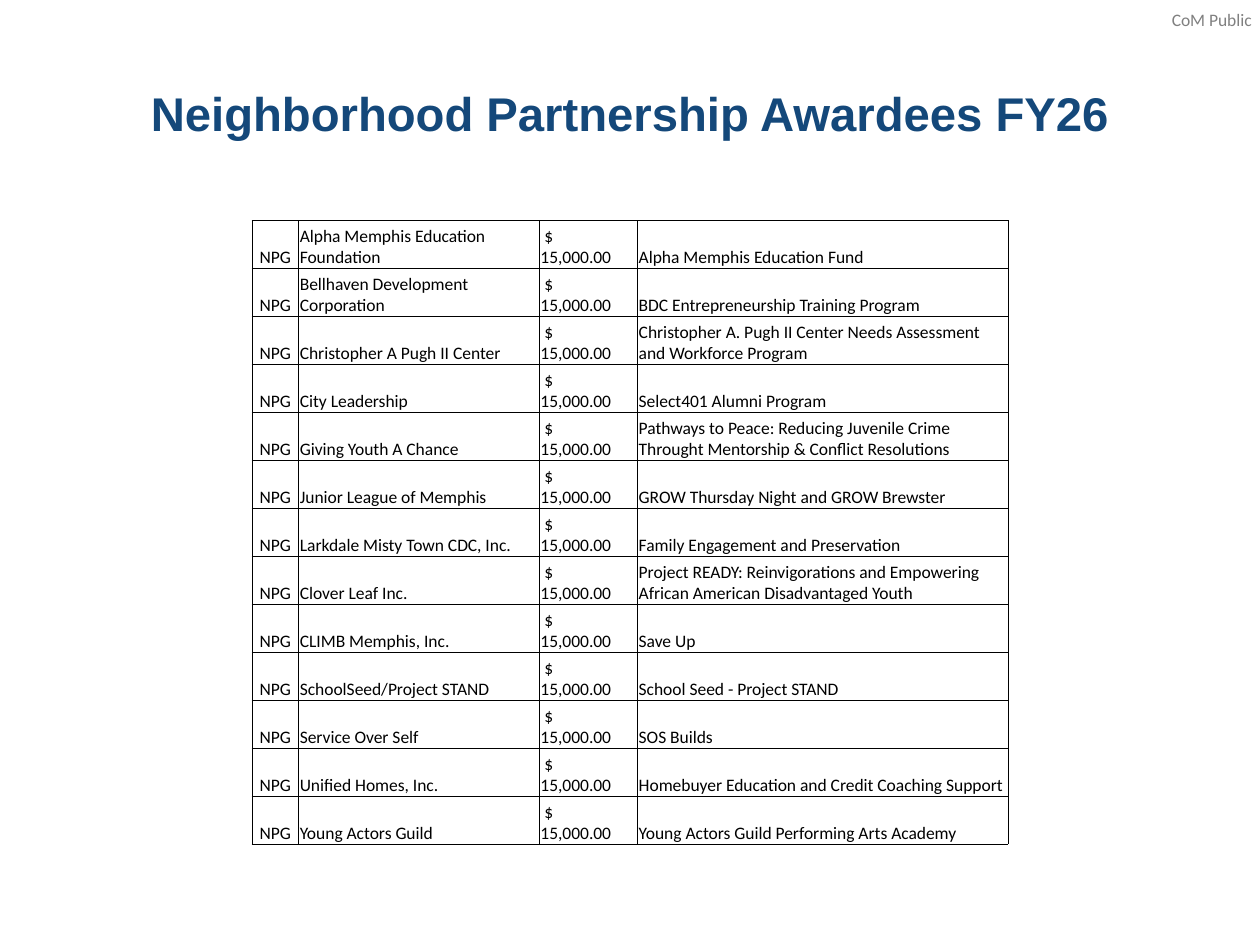
from lxml.etree import SubElement
from pptx import Presentation
from pptx.dml.color import RGBColor
from pptx.enum.text import MSO_ANCHOR, MSO_AUTO_SIZE, PP_ALIGN
from pptx.oxml.ns import qn
from pptx.util import Inches, Pt

TITLE = "Neighborhood Partnership Awardees FY26"
CLASSIFICATION = "CoM Public"
GRANT_TYPE = "NPG"
AMOUNT = " $\v15,000.00"
AWARDS = [
    ("Alpha Memphis Education Foundation", "Alpha Memphis Education Fund"),
    ("Bellhaven Development Corporation", "BDC Entrepreneurship Training Program"),
    ("Christopher A Pugh II Center",
     "Christopher A. Pugh II Center Needs Assessment and Workforce Program"),
    ("City Leadership", "Select401 Alumni Program"),
    ("Giving Youth A Chance",
     "Pathways to Peace: Reducing Juvenile Crime Throught Mentorship & Conflict Resolutions"),
    ("Junior League of Memphis", "GROW Thursday Night and GROW Brewster"),
    ("Larkdale Misty Town CDC, Inc.", "Family Engagement and Preservation"),
    ("Clover Leaf Inc.",
     "Project READY: Reinvigorations and Empowering African American Disadvantaged Youth"),
    ("CLIMB Memphis, Inc.", "Save Up"),
    ("SchoolSeed/Project STAND", "School Seed - Project STAND"),
    ("Service Over Self", "SOS Builds"),
    ("Unified Homes, Inc.", "Homebuyer Education and Credit Coaching Support"),
    ("Young Actors Guild", "Young Actors Guild Performing Arts Academy"),
]

THEME = {
    "title": {"name": "Arial", "size": Pt(27), "bold": True, "color": "14487A"},
    "cell": {"name": "Calibri", "size": Pt(10), "color": "000000"},
    "classification": {"name": "Calibri", "size": Pt(10), "color": "808080"},
    "border": {"color": "000000", "width": Pt(0.5)},
}
COLUMN_WIDTHS = [0.37, 1.91, 0.78, 2.94]
TABLE_LEFT, TABLE_TOP, TABLE_HEIGHT = 2, 1.75, 4.95
CELL_FORMAT = {
    "vertical_anchor": MSO_ANCHOR.BOTTOM,
    "margin_left": Inches(0.01),
    "margin_right": Inches(0.01),
    "margin_top": Inches(0.01),
    "margin_bottom": 0,
}


def set_attributes(target, values):
    for name, value in values.items():
        setattr(target, name, value)


def style_font(font, style):
    set_attributes(font, {k: v for k, v in style.items() if k != "color"})
    font.color.rgb = RGBColor.from_string(style["color"])


def place(shape, left, top, width, height):
    sides = zip(("left", "top", "width", "height"), (left, top, width, height))
    set_attributes(shape, {side: Inches(length) for side, length in sides})


def add_borders(cell):
    properties = cell._tc.get_or_add_tcPr()
    for index, side in enumerate(("lnL", "lnR", "lnT", "lnB")):
        line = SubElement(properties, qn(f"a:{side}"), w=str(THEME["border"]["width"]))
        fill = SubElement(line, qn("a:solidFill"))
        SubElement(fill, qn("a:srgbClr"), val=THEME["border"]["color"])
        properties.insert(index, line)


def add_title(slide):
    title = slide.shapes.title
    place(title, 0.5, 0.3, 9, 1.25)
    frame = title.text_frame
    frame.text = TITLE
    set_attributes(frame, {"vertical_anchor": MSO_ANCHOR.MIDDLE, "word_wrap": True})
    para = frame.paragraphs[0]
    set_attributes(para, {"alignment": PP_ALIGN.CENTER, "line_spacing": 0.9})
    style_font(para.runs[0].font, THEME["title"])


def add_classification(slide):
    box = slide.shapes.add_textbox(*map(Inches, (9.3, 0.07, 0.67, 0.17)))
    frame = box.text_frame
    frame.text = CLASSIFICATION
    set_attributes(frame, {
        "word_wrap": False, "auto_size": MSO_AUTO_SIZE.SHAPE_TO_FIT_TEXT,
        "margin_left": 0, "margin_right": 0, "margin_top": 0, "margin_bottom": 0,
    })
    style_font(frame.paragraphs[0].runs[0].font, THEME["classification"])


def add_awards_table(slide):
    rows = [(GRANT_TYPE, awardee, AMOUNT, program) for awardee, program in AWARDS]
    table = slide.shapes.add_table(
        len(rows), len(COLUMN_WIDTHS), Inches(TABLE_LEFT), Inches(TABLE_TOP),
        Inches(sum(COLUMN_WIDTHS)), Inches(TABLE_HEIGHT),
    ).table
    set_attributes(table, {"first_row": False, "horz_banding": False})
    for column, width in zip(table.columns, COLUMN_WIDTHS):
        column.width = Inches(width)
    for row, texts in zip(table.rows, rows):
        row.height = Inches(TABLE_HEIGHT / len(rows))
        for index, (cell, text) in enumerate(zip(row.cells, texts)):
            cell.text = text
            set_attributes(cell, CELL_FORMAT)
            cell.fill.background()
            add_borders(cell)
            para = cell.text_frame.paragraphs[0]
            para.alignment = PP_ALIGN.CENTER if index == 0 else PP_ALIGN.LEFT
            for span in para.runs:
                style_font(span.font, THEME["cell"])


def main():
    deck = Presentation()
    set_attributes(deck, {"slide_width": Inches(10), "slide_height": Inches(7.5)})
    slide = deck.slides.add_slide(deck.slide_layouts.get_by_name("Title Only"))
    add_classification(slide)
    add_title(slide)
    add_awards_table(slide)
    deck.save("out.pptx")


if __name__ == "__main__":
    main()
